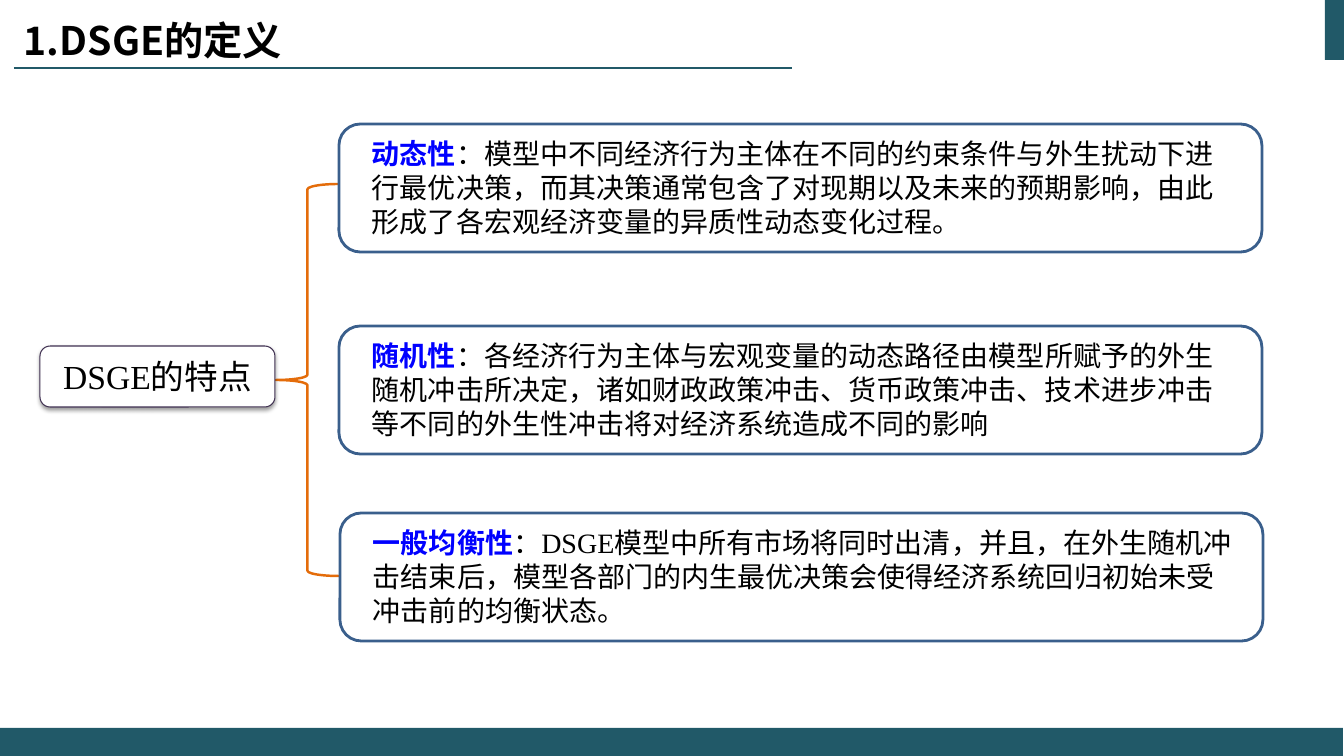
from lxml import etree
from pptx import Presentation
from pptx import util as u
from pptx.dml.color import RGBColor
from pptx.enum import shapes, text
from pptx.oxml.ns import qn

PX = 914400 / 100.8
COLORS = {"teal": "215968", "orange": "E46C0A", "frame": "3A5F8C",
          "violet": "403152", "blue": "0000FF", "black": "000000",
          "white": "FFFFFF"}
CJK = "Noto Sans CJK SC"
SERIF = "Times New Roman"
KIND = shapes.MSO_SHAPE

prs = Presentation()
prs.slide_width, prs.slide_height = u.Emu(round(1344 * PX)), u.Emu(round(756 * PX))
s = prs.slides.add_slide(prs.slide_layouts[6])


def add_block(kind, box, fill=None, line=None, width=1):
    """Preset shape, or a text box when kind is None; box is in px."""
    box = [u.Emu(round(v * PX)) for v in box]
    if kind is None:
        sp = s.shapes.add_textbox(*box)
    else:
        sp = s.shapes.add_shape(kind, *box)
        sp.shadow.inherit = False
        if fill:
            sp.fill.solid()
            sp.fill.fore_color.rgb = RGBColor.from_string(COLORS[fill])
        else:
            sp.fill.background()
        if line:
            sp.line.color.rgb = RGBColor.from_string(COLORS[line])
            sp.line.width = u.Pt(width)
        else:
            sp.line.fill.background()
    sp.text_frame.word_wrap = True
    return sp


def add_run(p, words, color, **fmt):
    r = p.add_run()
    r.text = words
    for key, value in fmt.items():
        setattr(r.font, key, value)
    r.font.color.rgb = RGBColor.from_string(COLORS[color])
    etree.SubElement(r.font._element, qn("a:ea"), typeface=CJK)


# Page frame: corner block, title rule, footer band
add_block(KIND.RECTANGLE, (1325, 0, 19, 60), "teal")
rule = s.shapes.add_connector(shapes.MSO_CONNECTOR.STRAIGHT,
                              *[u.Emu(round(v * PX)) for v in (14, 68, 792, 68)])
rule.line.color.rgb = RGBColor.from_string(COLORS["teal"])
rule.line.width = u.Pt(1.5)
etree.SubElement(rule._element.spPr, qn("a:effectLst"))
add_block(KIND.RECTANGLE, (0, 728, 1343, 28), "teal")

# Title
tf = add_block(None, (14, 13, 436, 54)).text_frame
tf.vertical_anchor = text.MSO_ANCHOR.MIDDLE
add_run(tf.paragraphs[0], "1.DSGE的定义", "black", name=CJK, size=u.Pt(28), bold=True)

# Brace from the topic to its three features
add_block(KIND.LEFT_BRACE, (276, 184, 63, 392), line="orange", width=1.75)

# Topic box with a soft shadow
topic = add_block(KIND.ROUNDED_RECTANGLE, (40, 346, 235, 61), "white", "violet", 0.75)
effects = topic._element.spPr.find(qn("a:effectLst"))
shadow = etree.SubElement(effects, qn("a:outerShdw"), blurRad="40000", dist="20000",
                          dir="5400000", rotWithShape="0")
shade = etree.SubElement(shadow, qn("a:srgbClr"), val=COLORS["black"])
etree.SubElement(shade, qn("a:alpha"), val="38000")
tf = topic.text_frame
tf.vertical_anchor = text.MSO_ANCHOR.MIDDLE
p = tf.paragraphs[0]
p.alignment = text.PP_ALIGN.CENTER
add_run(p, "DSGE的特点", "black", name=SERIF, size=u.Pt(24))

# Features: left, top, term, explanation
features = [
    (339, 124, "动态性", "：模型中不同经济行为主体在不同的约束条件与外生扰动下进行最优决策，"
     "而其决策通常包含了对现期以及未来的预期影响，由此形成了各宏观经济变量的异质性动态变化过程。"),
    (339, 326, "随机性", "：各经济行为主体与宏观变量的动态路径由模型所赋予的外生随机冲击所决定，"
     "诸如财政政策冲击、货币政策冲击、技术进步冲击等不同的外生性冲击将对经济系统造成不同的影响"),
    (340, 513, "一般均衡性", "：DSGE模型中所有市场将同时出清，并且，在外生随机冲击结束后，"
     "模型各部门的内生最优决策会使得经济系统回归初始未受冲击前的均衡状态。"),
]
for left, top, term, explanation in features:
    add_block(KIND.ROUNDED_RECTANGLE, (left, top, 923, 128), line="frame", width=2)
    tf = add_block(None, (left + 23, top + 8, 889, 112)).text_frame
    p = tf.paragraphs[0]
    add_run(p, term, "blue", name=SERIF, size=u.Pt(20), bold=True)
    add_run(p, explanation, "black", name=SERIF, size=u.Pt(20), bold=False)

prs.save("out.pptx")
